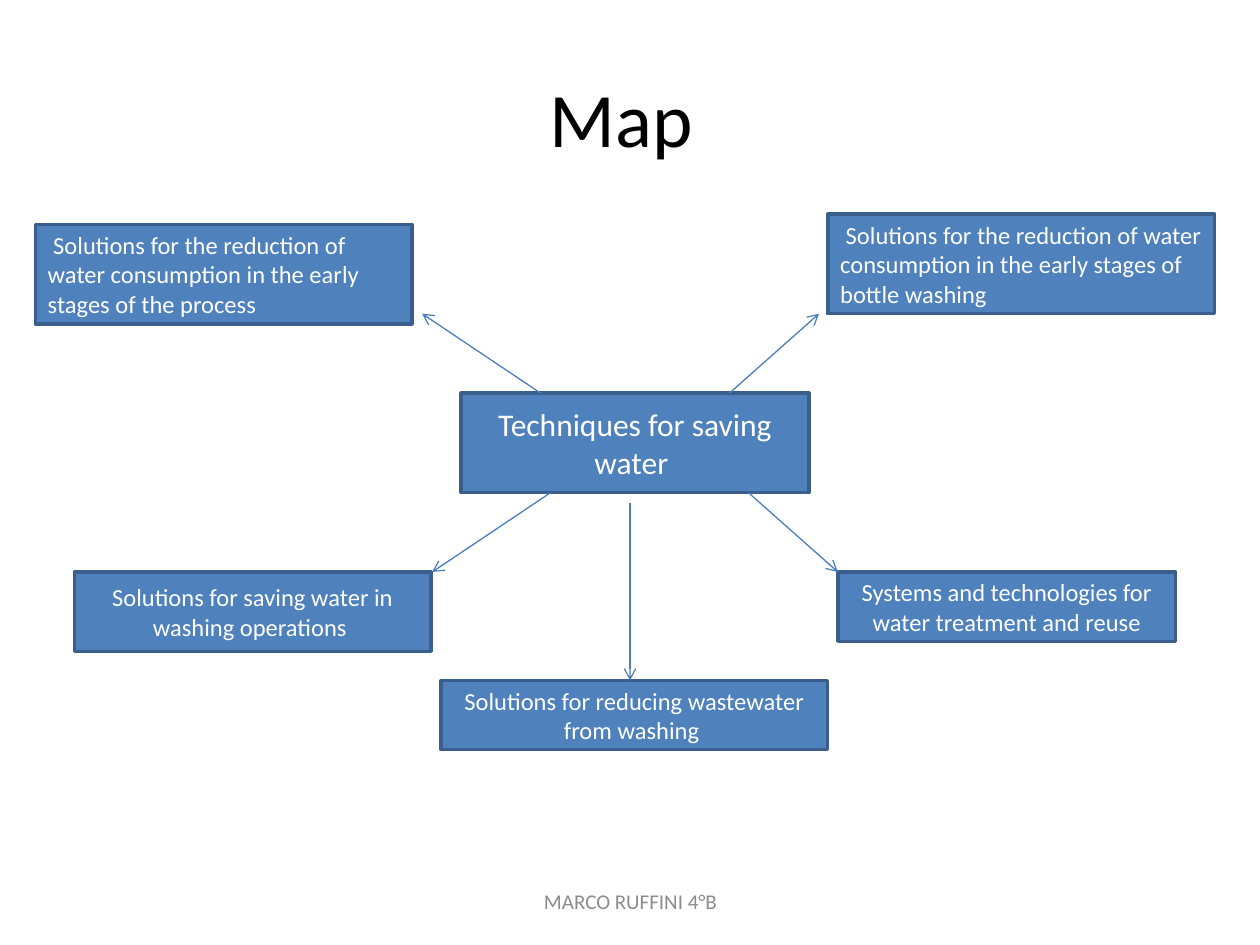
from pptx import Presentation, util as u
from pptx.dml.color import RGBColor
from pptx.enum import shapes, text
from pptx.oxml import parse_xml
from pptx.oxml.ns import nsdecls, qn

prs = Presentation()
prs.slide_width, prs.slide_height = u.Inches(10), u.Inches(7.5)
s = prs.slides.add_slide(prs.slide_layouts[6])

# Grid of 100 columns by 75 rows
COL, ROW = prs.slide_width / 100, prs.slide_height / 75
CENTER, LEFT = text.PP_ALIGN.CENTER, text.PP_ALIGN.LEFT


def rgb(h):
    return RGBColor.from_string(h)


def write(sp, words, size, color, align=CENTER):
    tf = sp.text_frame
    tf.word_wrap = True
    tf.vertical_anchor = text.MSO_ANCHOR.MIDDLE
    p = tf.paragraphs[0]
    p.alignment = align
    r = p.add_run()
    r.text = words
    for name, value in {"name": "Calibri", "size": u.Pt(size)}.items():
        setattr(r.font, name, value)
    r.font.color.rgb = rgb(color)


# Title and footer: column, row, width, height, words, size, colour
labels = [
    (5, 3, 90, 12.5, "Map ", 44, "000000"),
    (34.2, 69.5, 31.7, 4, "MARCO RUFFINI 4°B", 12, "8C8C8C"),
]
for x, y, w, h, words, size, color in labels:
    sp = s.shapes.add_textbox(int(x * COL), int(y * ROW), int(w * COL), int(h * ROW))
    write(sp, words, size, color)

# Central topic and its five branches
start = " Solutions for the reduction of water consumption in the early stages of "
boxes = [
    (36.6, 31.2, 27.6, 7.9, "Techniques for saving water ", 18, CENTER),
    (2.8, 17.8, 29.9, 7.9, start + "the process", 14, LEFT),
    (65.7, 17, 30.7, 7.9, start + "bottle washing", 14, LEFT),
    (5.9, 45.4, 28.3, 6.3, "Solutions for saving water in washing operations ", 14, CENTER),
    (35, 54, 30.7, 5.5, "Solutions for reducing wastewater from washing ", 14, CENTER),
    (66.5, 45.4, 26.8, 5.5, "Systems and technologies for water treatment and reuse", 14, CENTER),
]
for x, y, w, h, words, size, align in boxes:
    sp = s.shapes.add_shape(shapes.MSO_SHAPE.RECTANGLE,
                            int(x * COL), int(y * ROW), int(w * COL), int(h * ROW))
    sp.shadow.inherit = False
    sp.fill.solid()
    sp.fill.fore_color.rgb = rgb("4F81BD")
    sp.line.color.rgb = rgb("3A5F8C")
    sp.line.width = u.Pt(2)
    write(sp, words, size, "FFFFFF", align)

# Arrows from the topic to the branches: start column, row, end column, row
arrows = [
    (42.9, 31.2, 33.5, 24.9),
    (57.9, 31.2, 65, 24.9),
    (43.7, 39.1, 34.3, 45.4),
    (50, 39.9, 50, 54),
    (59.4, 39.1, 66.5, 45.4),
]
for x1, y1, x2, y2 in arrows:
    c = s.shapes.add_connector(shapes.MSO_CONNECTOR.STRAIGHT,
                               int(x1 * COL), int(y1 * ROW), int(x2 * COL), int(y2 * ROW))
    c.line.color.rgb = rgb("4B7EBC")
    c.line.width = u.Pt(0.75)
    spPr = c._element.spPr
    spPr.find(qn("a:ln")).append(parse_xml(f'<a:tailEnd {nsdecls("a")} type="arrow"/>'))
    spPr.append(parse_xml(f'<a:effectLst {nsdecls("a")}/>'))

prs.save("out.pptx")
